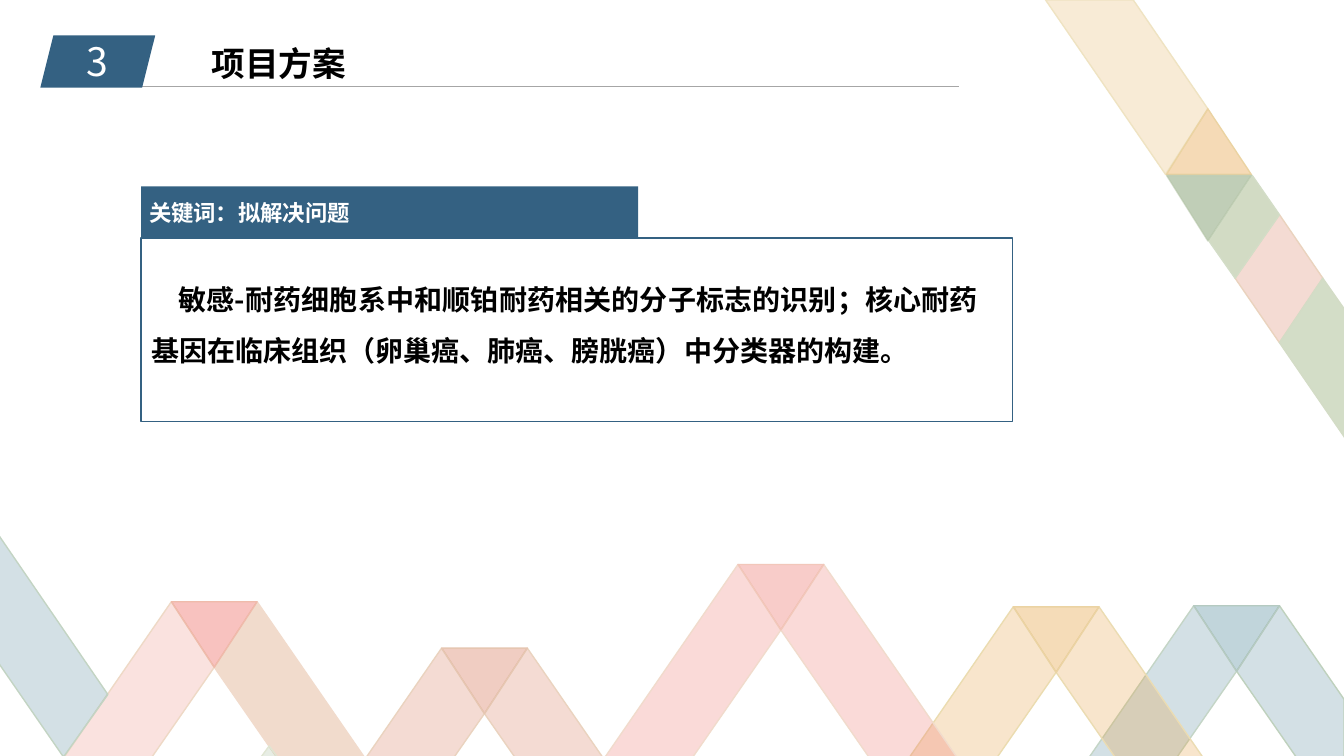
import lxml.etree
import pptx
import pptx.dml.color
import pptx.enum.shapes
import pptx.enum.text
import pptx.oxml.ns
import pptx.util
from pptx.util import Inches

FONT = "Noto Sans CJK SC"
NAVY = "346182"
WHITE = "FFFFFF"
BLACK = "000000"
SLIDE_WIDTH = 13.33
SLIDE_HEIGHT = 7.5
RIBBON_BOTTOM = 7.54
RIBBON_SLOPE = 0.69
FOLD_WIDTH = 0.85
FOLD_HEIGHT = 0.65
SHAPES = pptx.enum.shapes.MSO_SHAPE
ALIGN = pptx.enum.text.PP_ALIGN
ANCHOR = pptx.enum.text.MSO_ANCHOR

# left, top, then (fill, opacity, line) for the left leg, right leg and fold
PEAKS = [
    (1.7, 5.97, ("EE8F82", 25, "EED9C6"), ("F1DBCC", 100, "F1DBCC"), ("ED5249", 35, "EFBBAB")),
    (4.38, 6.43, ("D57053", 25, "EAD3BF"), ("D57053", 25, "EAD3BF"), ("D57053", 35, "E6C6B1")),
    (11.84, 6.01, ("508799", 25, "C4D5C6"), ("508799", 25, "BFD1BD"), ("508799", 35, "B5CAC1")),
    (10.05, 6.02, ("E49B35", 25, "EBDCB0"), ("E49B35", 25, "EBDCB2"), ("E49B35", 35, "EBD3A3")),
    (7.32, 5.6, ("ED6F65", 25, "F1DBCC"), ("ED6F65", 25, "F1DBCC"), ("ED6F65", 35, "F2C7BA")),
]

CORNER_PIECES = [
    ([(10.37, 0), (11.24, 0), (11.98, 1.08), (11.56, 1.73)], ("E7B05E", 25, "EFE3C2")),
    ([(12.69, 2.13), (13.12, 2.76), (12.69, 3.4), (12.25, 2.76)], ("D57053", 25, "EAD3BE")),
    ([(12.42, 1.74), (12.69, 2.13), (12.25, 2.76), (11.99, 2.39)], ("D2DBC4", 100, "D3DDC7")),
    ([(13.12, 2.76), (13.35, 3.09), (13.35, 4.36), (12.69, 3.4)], ("D3DDC7", 100, "D3DCC6")),
    ([(11.98, 1.08), (12.41, 1.73), (11.57, 1.73)], ("E49B35", 36, "EBD3A2")),
    ([(11.98, 2.39), (12.41, 1.74), (11.57, 1.74)], ("88A378", 53, "B3C4A5", 53)),
    ([(2.67, 7.4), (2.78, 7.55), (2.56, 7.55)], ("A2B894", 25, "E0E6D3")),
    ([(-0.04, 5.27), (1.07, 6.89), (0.63, 7.51), (-0.04, 6.54)], ("508799", 25, "C3D4C3")),
]


def rgb(value):
    """Return the colour for a hex string."""
    return pptx.dml.color.RGBColor.from_string(value)


def paint(fill, colour, opacity=100):
    """Make a fill solid, with an opacity in percent."""
    fill.solid()
    fill.fore_color.rgb = rgb(colour)
    if opacity < 100:
        node = fill._xPr.find(pptx.oxml.ns.qn("a:solidFill"))[0]
        alpha = lxml.etree.SubElement(node, pptx.oxml.ns.qn("a:alpha"))
        alpha.set("val", str(opacity * 1000))


def add_polygon(page, points, style):
    """Draw a closed outline through points given in inches."""
    fill, opacity, line, *line_opacity = style
    corners = [(Inches(x), Inches(y)) for x, y in points]
    builder = page.shapes.build_freeform(*corners[0])
    builder.add_line_segments(corners[1:], close=True)
    shape = builder.convert_to_shape()
    shape.shadow.inherit = False
    paint(shape.fill, fill, opacity)
    paint(shape.line.fill, line, *line_opacity)
    shape.line.width = pptx.util.Pt(1)


def add_peak(page, left, top, left_style, right_style, fold_style):
    """Draw a folded ribbon peak: two slanted legs and the fold between."""
    right = left + FOLD_WIDTH
    tip = (left + FOLD_WIDTH / 2, top + FOLD_HEIGHT)
    run = RIBBON_SLOPE * (RIBBON_BOTTOM - top)
    inner_run = run - FOLD_WIDTH - 0.02
    edge = min(right + run, SLIDE_WIDTH)
    edge_top = top + (edge - right) / RIBBON_SLOPE
    add_polygon(page, [(left, top), tip, (left - inner_run, RIBBON_BOTTOM),
                       (left - run, RIBBON_BOTTOM)], left_style)
    add_polygon(page, [(right, top), (edge, edge_top), (edge, RIBBON_BOTTOM),
                       (right + inner_run, RIBBON_BOTTOM), tip], right_style)
    add_polygon(page, [(left, top), (right, top), tip], fold_style)


def add_block(page, kind, bounds, fill=None, line=None):
    """Draw a preset shape with an optional fill and outline."""
    shape = page.shapes.add_shape(kind, *map(Inches, bounds))
    shape.shadow.inherit = False
    if fill:
        paint(shape.fill, fill)
    else:
        shape.fill.background()
    if line:
        paint(shape.line.fill, line)
        shape.line.width = pptx.util.Pt(1)
    else:
        shape.line.fill.background()


def add_rule(page, left, right, top, colour):
    """Draw a thin horizontal rule."""
    rule = page.shapes.add_connector(
        pptx.enum.shapes.MSO_CONNECTOR.STRAIGHT,
        Inches(left), Inches(top), Inches(right), Inches(top))
    rule.line.color.rgb = rgb(colour)
    rule.line.width = pptx.util.Pt(0.5)
    lxml.etree.SubElement(rule._element.spPr, pptx.oxml.ns.qn("a:effectLst"))


def add_text(page, bounds, text, size, colour, bold=True, align=ALIGN.LEFT,
             anchor=ANCHOR.TOP, wrap=True):
    """Add a one-paragraph text box and return its paragraph."""
    frame = page.shapes.add_textbox(*map(Inches, bounds)).text_frame
    frame.word_wrap = wrap
    frame.vertical_anchor = anchor
    frame.text = text
    para = frame.paragraphs[0]
    para.alignment = align
    span = para.runs[0]
    span.font.size = pptx.util.Pt(size)
    span.font.name = FONT
    span.font.bold = bold
    span.font.color.rgb = rgb(colour)
    east_asian = lxml.etree.SubElement(span.font._element, pptx.oxml.ns.qn("a:ea"))
    east_asian.set("typeface", FONT)
    return para


def add_header(page):
    """Add the section number, title and rule."""
    add_rule(page, 0.87, 9.51, 0.86, "A6A6A6")
    add_block(page, SHAPES.PARALLELOGRAM, (0.4, 0.35, 1.14, 0.52), fill=NAVY)
    add_text(page, (0.41, 0.32, 1.12, 0.57), "3", 28, WHITE, bold=False, align=ALIGN.CENTER)
    add_text(page, (2, 0.38, 1.55, 0.5), "项目方案", 24, BLACK, wrap=False)


def add_problem_panel(page):
    """Add the framed statement of the problem with its heading."""
    add_block(page, SHAPES.RECTANGLE, (1.4, 2.36, 8.64, 1.82), line=NAVY)
    add_block(page, SHAPES.RECTANGLE, (1.4, 1.85, 4.93, 0.51), fill=NAVY)
    add_text(page, (1.38, 1.92, 5.17, 0.37), "关键词：拟解决问题", 16, WHITE, anchor=ANCHOR.MIDDLE)
    para = add_text(
        page, (1.4, 2.59, 8.4, 1.11),
        "敏感-耐药细胞系中和顺铂耐药相关的分子标志的识别；核心耐药基因在临床组织"
        "（卵巢癌、肺癌、膀胱癌）中分类器的构建。",
        20, BLACK, align=ALIGN.JUSTIFY)
    para.line_spacing = 1.5
    para._p.get_or_add_pPr().set("indent", str(Inches(0.27)))


def main():
    """Build the slide and save it."""
    deck = pptx.Presentation()
    deck.slide_width = Inches(SLIDE_WIDTH)
    deck.slide_height = Inches(SLIDE_HEIGHT)
    page = deck.slides.add_slide(deck.slide_layouts[6])
    for peak in PEAKS:
        add_peak(page, *peak)
    for points, style in CORNER_PIECES:
        add_polygon(page, points, style)
    add_header(page)
    add_problem_panel(page)
    deck.save("out.pptx")


if __name__ == "__main__":
    main()
